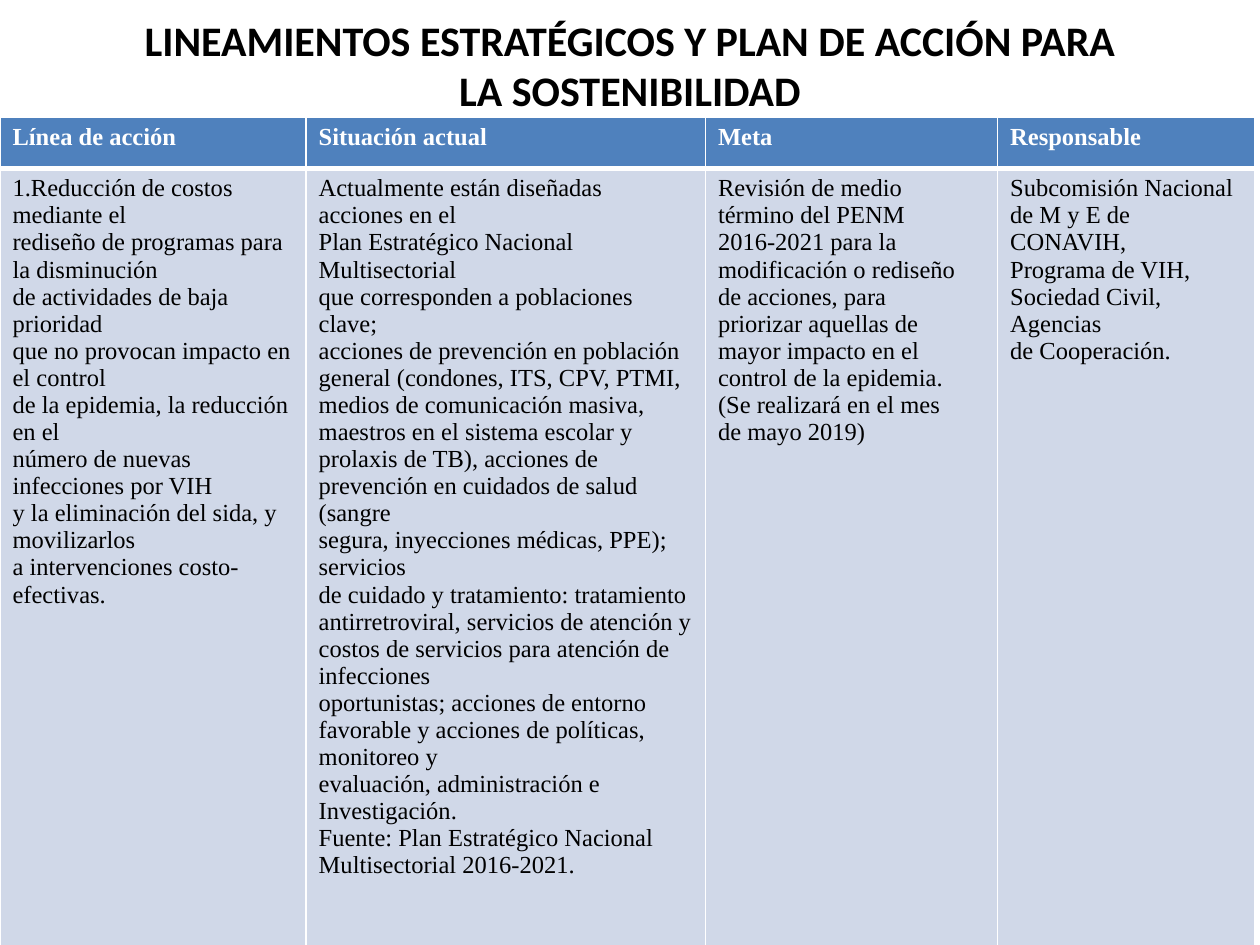
from dataclasses import dataclass

from lxml import etree
from pptx import Presentation
from pptx.dml.color import RGBColor
from pptx.enum import text
from pptx.oxml.ns import qn
from pptx.util import Cm, Pt


@dataclass(frozen=True)
class Theme:
    title_font: str = "Calibri"
    table_font: str = "Times New Roman"
    title_size: int = 24
    table_size: int = 14
    black: str = "000000"
    white: str = "FFFFFF"
    header_fill: str = "4F81BD"
    body_fill: str = "D0D8E8"
    thin: float = 1
    thick: float = 3


@dataclass(frozen=True)
class Column:
    heading: str
    width: float
    lines: list[str]


THEME = Theme()
TITLE = ["LINEAMIENTOS ESTRATÉGICOS Y PLAN DE ACCIÓN PARA", "LA SOSTENIBILIDAD"]
HEADER_HEIGHT, BODY_HEIGHT = 1.04, 14.4

COLUMNS = [
    Column("Línea de acción", 6.17, [
        "1.Reducción de costos mediante el",
        "rediseño de programas para la disminución",
        "de actividades de baja prioridad",
        "que no provocan impacto en el control",
        "de la epidemia, la reducción en el",
        "número de nuevas infecciones por VIH",
        "y la eliminación del sida, y movilizarlos",
        "a intervenciones costo-efectivas.",
    ]),
    Column("Situación actual", 8.05, [
        "Actualmente están diseñadas acciones en el",
        "Plan Estratégico Nacional Multisectorial",
        "que corresponden a poblaciones clave;",
        "acciones de prevención en población general (condones, ITS, CPV, PTMI, "
        "medios de comunicación masiva, maestros en el sistema escolar y "
        "prolaxis de TB), acciones de prevención en cuidados de salud (sangre",
        "segura, inyecciones médicas, PPE); servicios",
        "de cuidado y tratamiento: tratamiento antirretroviral, servicios de "
        "atención y costos de servicios para atención de infecciones",
        "oportunistas; acciones de entorno favorable y acciones de políticas, "
        "monitoreo y",
        "evaluación, administración e Investigación.",
        "Fuente: Plan Estratégico Nacional Multisectorial 2016-2021.",
    ]),
    Column("Meta", 5.89, [
        "Revisión de medio",
        "término del PENM",
        "2016-2021 para la",
        "modificación o rediseño",
        "de acciones, para",
        "priorizar aquellas de",
        "mayor impacto en el",
        "control de la epidemia.",
        "(Se realizará en el mes",
        "de mayo 2019)",
    ]),
    Column("Responsable", 5.18, [
        "Subcomisión Nacional",
        "de M y E de CONAVIH,",
        "Programa de VIH,",
        "Sociedad Civil, Agencias",
        "de Cooperación.",
    ]),
]


def add_run(p, words: str, font: str, size: int, color: str, bold: bool) -> None:
    r = p.add_run()
    r.text = words
    r.font.name, r.font.size, r.font.bold = font, Pt(size), bold
    r.font.color.rgb = RGBColor.from_string(color)


def set_borders(cell, top: float, bottom: float) -> None:
    # Border lines must come before the fill in the cell properties
    widths = {"lnL": THEME.thin, "lnR": THEME.thin, "lnT": top, "lnB": bottom}
    props = cell._tc.get_or_add_tcPr()
    for i, (side, width) in enumerate(widths.items()):
        ln = etree.Element(qn(f"a:{side}"), w=str(Pt(width)))
        fill = etree.SubElement(ln, qn("a:solidFill"))
        etree.SubElement(fill, qn("a:srgbClr"), val=THEME.white)
        props.insert(i, ln)


def fill_cell(cell, lines: list[str], header: bool) -> None:
    cell.fill.solid()
    cell.fill.fore_color.rgb = RGBColor.from_string(
        THEME.header_fill if header else THEME.body_fill)
    tf = cell.text_frame
    for i, line in enumerate(lines):
        p = tf.add_paragraph() if i else tf.paragraphs[0]
        add_run(p, line, THEME.table_font, THEME.table_size,
                THEME.white if header else THEME.black, header)
    if header:
        set_borders(cell, THEME.thin, THEME.thick)
    else:
        set_borders(cell, THEME.thick, THEME.thin)


def add_title(s, lines: list[str]) -> None:
    tf = s.shapes.add_textbox(Cm(1.27), Cm(0.53), Cm(22.86), Cm(1.55)).text_frame
    tf.word_wrap = True
    tf.vertical_anchor = text.MSO_ANCHOR.MIDDLE
    p = tf.paragraphs[0]
    p.alignment = text.PP_ALIGN.CENTER
    for i, line in enumerate(lines):
        if i:
            p.add_line_break()
        add_run(p, line, THEME.title_font, THEME.title_size, THEME.black, True)


def add_plan(s, columns: list[Column]) -> None:
    width = sum(col.width for col in columns)
    table = s.shapes.add_table(2, len(columns), Cm(0), Cm(2.36), Cm(width),
                               Cm(HEADER_HEIGHT + BODY_HEIGHT)).table
    table.rows[0].height, table.rows[1].height = Cm(HEADER_HEIGHT), Cm(BODY_HEIGHT)
    for i, col in enumerate(columns):
        table.columns[i].width = Cm(col.width)
        fill_cell(table.cell(0, i), [col.heading], True)
        fill_cell(table.cell(1, i), col.lines, False)


def main() -> None:
    prs = Presentation()
    prs.slide_width, prs.slide_height = Cm(25.4), Cm(19.05)
    s = prs.slides.add_slide(prs.slide_layouts[6])
    # Title
    add_title(s, TITLE)
    # Action plan table
    add_plan(s, COLUMNS)
    prs.save("out.pptx")


if __name__ == "__main__":
    main()
